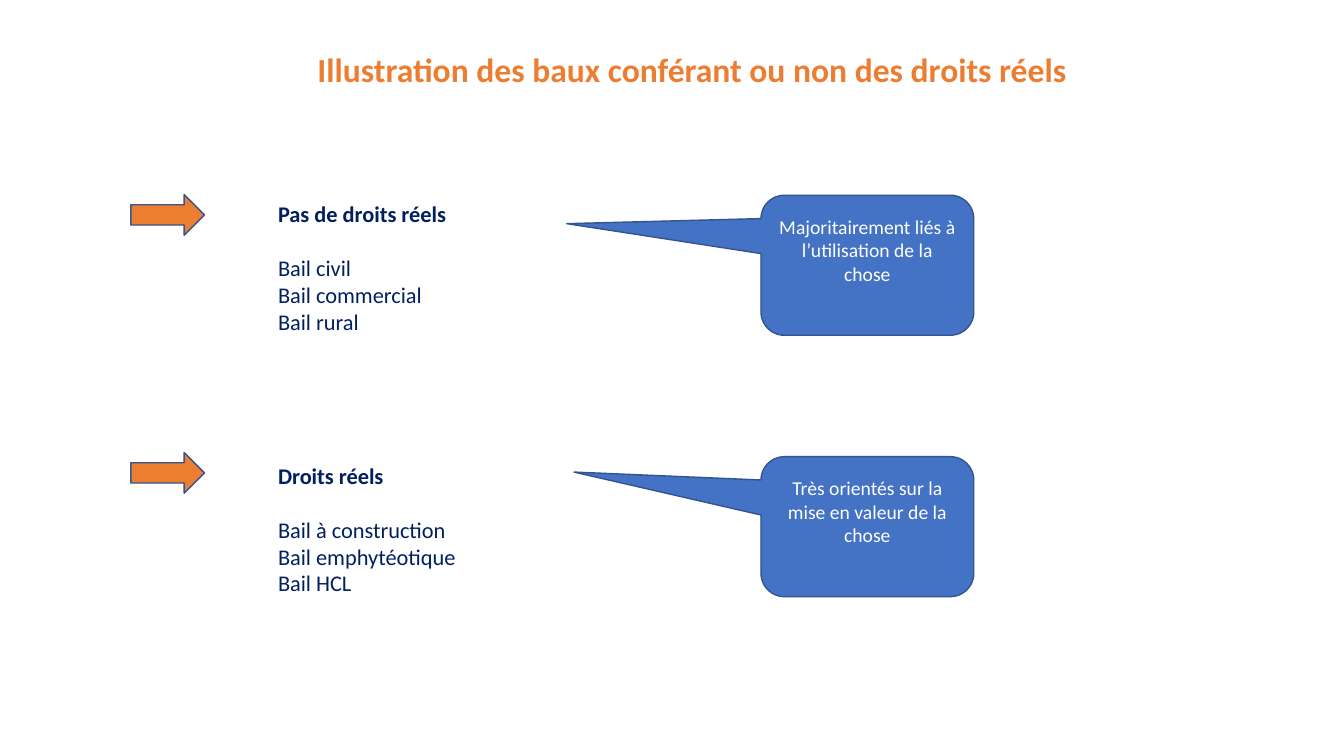
from pptx import Presentation
from pptx.dml.color import RGBColor
from pptx.enum import shapes, text
from pptx.util import Pt

COLORS = {"orange": "ED7D31", "navy": "002060", "blue": "4472C4",
          "outline": "325491", "white": "FFFFFF"}
LINE_HEIGHT = 1.22  # of the font size


class SlideBuilder:
    font = "Calibri"

    def __init__(self, page):
        self.page = page

    def add_span(self, para, words, size, color, bold=False):
        span = para.add_run()
        span.text = words
        span.font.name = self.font
        span.font.size = Pt(size)
        span.font.bold = bold
        span.font.color.rgb = RGBColor.from_string(COLORS[color])

    def add_text_box(self, left, top, width, height):
        box = self.page.shapes.add_textbox(Pt(left), Pt(top), Pt(width), Pt(height))
        box.text_frame.word_wrap = True
        return box.text_frame

    def add_title(self, words, left, top, width, height):
        para = self.add_text_box(left, top, width, height).paragraphs[0]
        para.alignment = text.PP_ALIGN.CENTER
        self.add_span(para, words, 24, "orange", bold=True)

    def add_list(self, heading, items, left, top, width, height, size=16):
        frame = self.add_text_box(left, top, width, height)
        self.add_span(frame.paragraphs[0], heading, size, "navy", bold=True)
        for index, item in enumerate(items):
            para = frame.add_paragraph()
            if index == 0:
                para.space_before = Pt(round(size * LINE_HEIGHT, 1))
            self.add_span(para, item, size, "navy")

    def add_shape(self, kind, fill, left, top, width, height):
        shape = self.page.shapes.add_shape(kind, Pt(left), Pt(top), Pt(width), Pt(height))
        shape.shadow.inherit = False
        shape.fill.solid()
        shape.fill.fore_color.rgb = RGBColor.from_string(COLORS[fill])
        shape.line.color.rgb = RGBColor.from_string(COLORS["outline"])
        shape.line.width = Pt(1)
        return shape

    def add_arrow(self, left, top, width, height):
        self.add_shape(shapes.MSO_SHAPE.RIGHT_ARROW, "orange", left, top, width, height)

    def add_callout(self, words, tip, left, top, width, height):
        shape = self.add_shape(shapes.MSO_SHAPE.ROUNDED_RECTANGULAR_CALLOUT, "blue",
                               left, top, width, height)
        for index, value in enumerate((*tip, 0.167)):
            shape.adjustments[index] = value
        frame = shape.text_frame
        frame.word_wrap = True
        frame.vertical_anchor = text.MSO_ANCHOR.MIDDLE
        frame.margin_bottom = Pt(25.6)  # lifts the words above the middle
        para = frame.paragraphs[0]
        para.alignment = text.PP_ALIGN.CENTER
        self.add_span(para, words, 14, "white")


def main():
    deck = Presentation()
    deck.slide_width, deck.slide_height = Pt(960), Pt(540)
    builder = SlideBuilder(deck.slides.add_slide(deck.slide_layouts[6]))

    # Title
    builder.add_title("Illustration des baux conférant ou non des droits réels",
                      191.5, 31.7, 605.5, 36)

    # One row per family of leases: top, arrow top, heading, leases, callout, callout tip
    rows = [
        (139.5, 139, "Pas de droits réels",
         ["Bail civil", "Bail commercial", "Bail rural"],
         "Majoritairement liés à l’utilisation de la chose", (-1.413, -0.297)),
        (326.2, 323.3, "Droits réels",
         ["Bail à construction", "Bail emphytéotique", "Bail HCL"],
         "Très orientés sur la mise en valeur de la chose", (-1.379, -0.39)),
    ]
    for top, arrow_top, heading, leases, remark, tip in rows:
        builder.add_arrow(93.5, arrow_top, 52.6, 29)
        builder.add_list(heading, leases, 191.5, top, 684.7, 104.4)
        builder.add_callout(remark, tip, 543.6, top, 152, 100)

    deck.save("out.pptx")


if __name__ == "__main__":
    main()
